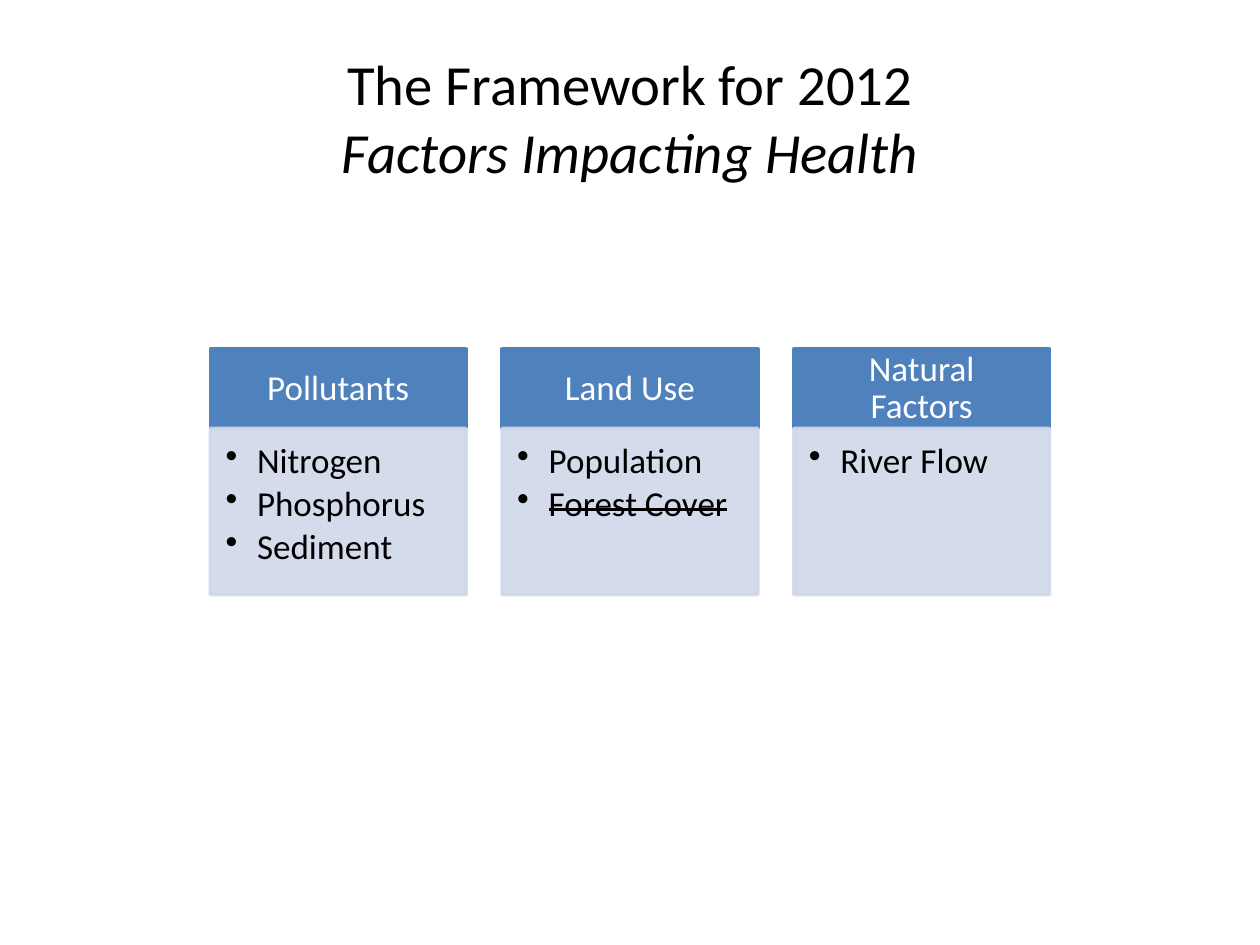
import lxml.etree
import pptx
import pptx.dml.color
import pptx.enum.shapes
import pptx.enum.text
import pptx.oxml.ns
import pptx.util

Inches = pptx.util.Inches
Pt = pptx.util.Pt
RGBColor = pptx.dml.color.RGBColor
Align = pptx.enum.text.PP_ALIGN
Anchor = pptx.enum.text.MSO_ANCHOR
qn = pptx.oxml.ns.qn

BLACK = RGBColor(0x00, 0x00, 0x00)
WHITE = RGBColor(0xFF, 0xFF, 0xFF)
BLUE = RGBColor(0x4F, 0x81, 0xBD)
PALE_BLUE = RGBColor(0xD0, 0xD8, 0xE8)

FACTORS = [
    ("Pollutants", ["Nitrogen", "Phosphorus", "Sediment"]),
    ("Land Use", ["Population", "Forest Cover"]),
    ("Natural Factors", ["River Flow"]),
]
STRUCK_OUT = {"Forest Cover"}

COLUMN_LEFT, COLUMN_STEP, COLUMN_WIDTH = 1.67, 2.315, 2.03
HEADER_TOP, HEADER_HEIGHT, LIST_HEIGHT = 2.77, 0.63, 1.32


def style_run(run, size, color):
    run.font.name = "Calibri"
    run.font.size = Pt(size)
    run.font.color.rgb = color


def set_opacity(fill_parent, percent):
    color = fill_parent.find(qn("a:solidFill"))[0]
    lxml.etree.SubElement(color, qn("a:alpha")).set("val", str(percent * 1000))


def set_bullet(para):
    para.level = 1
    properties = para._p.get_or_add_pPr()
    properties.set("marL", str(Inches(0.25)))
    properties.set("indent", str(Inches(-0.25)))
    lxml.etree.SubElement(properties, qn("a:buChar")).set("char", "•")


def add_title(slide, first_line, second_line):
    title = slide.shapes.title
    title.left, title.top = Inches(0.5), Inches(0.3)
    title.width, title.height = Inches(9), Inches(1.25)
    frame = title.text_frame
    frame.text = f"{first_line}\v{second_line}"
    frame.auto_size = pptx.enum.text.MSO_AUTO_SIZE.NONE
    frame.vertical_anchor = Anchor.MIDDLE
    para = frame.paragraphs[0]
    para.alignment = Align.CENTER
    for run in para.runs:
        style_run(run, 32.4, BLACK)
    para.runs[1].font.italic = True


def add_box(group, left, top, height, color, margins):
    """Add a filled rectangle; margins are left, top, right, bottom."""
    box = group.shapes.add_shape(
        pptx.enum.shapes.MSO_SHAPE.RECTANGLE,
        Inches(left), Inches(top), Inches(COLUMN_WIDTH), Inches(height))
    box.shadow.inherit = False
    box.fill.solid()
    box.fill.fore_color.rgb = color
    box.line.color.rgb = color
    box.line.width = Pt(2)
    frame = box.text_frame
    frame.word_wrap = True
    (frame.margin_left, frame.margin_top,
     frame.margin_right, frame.margin_bottom) = map(Inches, margins)
    return box


def add_header(group, left, text):
    box = add_box(group, left, HEADER_TOP, HEADER_HEIGHT, BLUE,
                  (0.16, 0.09, 0.16, 0.09))
    box.text_frame.text = text
    box.text_frame.vertical_anchor = Anchor.MIDDLE
    para = box.text_frame.paragraphs[0]
    para.alignment = Align.CENTER
    para.line_spacing = 0.9
    style_run(para.runs[0], 20, WHITE)


def add_list(group, left, items):
    box = add_box(group, left, HEADER_TOP + HEADER_HEIGHT, LIST_HEIGHT,
                  PALE_BLUE, (0.12, 0.12, 0.16, 0.17))
    set_opacity(box._element.spPr, 90)
    set_opacity(box._element.spPr.find(qn("a:ln")), 90)
    frame = box.text_frame
    frame.vertical_anchor = Anchor.TOP
    frame.text = "\n".join(items)
    for para in frame.paragraphs:
        para.alignment = Align.LEFT
        para.line_spacing = 0.9
        para.space_after = Pt(3)
        set_bullet(para)
        run = para.runs[0]
        style_run(run, 20, BLACK)
        if run.text in STRUCK_OUT:
            run.font._element.set("strike", "sngStrike")


def main():
    deck = pptx.Presentation()
    deck.slide_width, deck.slide_height = Inches(10), Inches(7.5)
    slide = deck.slides.add_slide(deck.slide_layouts.get_by_name("Title Only"))
    add_title(slide, "The Framework for 2012", "Factors Impacting Health")
    group = slide.shapes.add_group_shape()
    for column, (heading, items) in enumerate(FACTORS):
        left = COLUMN_LEFT + column * COLUMN_STEP
        add_header(group, left, heading)
        add_list(group, left, items)
    deck.save("out.pptx")


if __name__ == "__main__":
    main()
